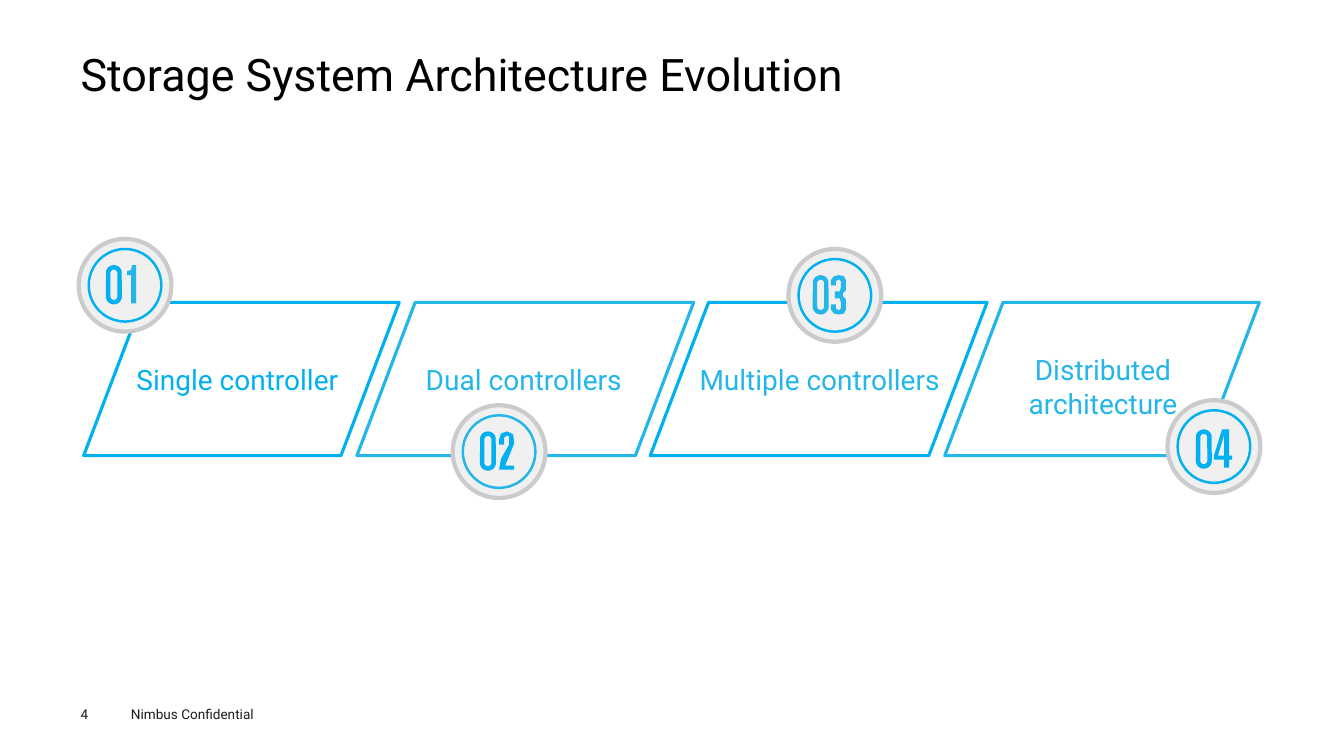
"""Build the storage architecture evolution slide: four panels with numbered badges."""
import math
import pptx
import pptx.dml.color
import pptx.enum.shapes
import pptx.enum.text
import pptx.util

PX = 9144
FINE = 10
SHAPE = pptx.enum.shapes.MSO_SHAPE
ALIGN = pptx.enum.text.PP_ALIGN
ANCHOR = pptx.enum.text.MSO_ANCHOR
RGB = pptx.dml.color.RGBColor.from_string

THEME = {
    "font": "Roboto",
    "bright": "00B0F0", "soft": "24B5E9",
    "badge": "F0F0F0", "rim": "CBCBCD",
    "title": "000000", "footer": "1D1D1B",
    "title_size": 32, "label_size": 20, "footer_size": 9.7,
    "panel_line": 2.25, "rim_line": 3, "ring_line": 1.75,
}

angles = [math.radians(step * 15) for step in range(24)]
capsules = [
    [(8 + r * math.cos(a), 19.5 + r * math.sin(a) + math.copysign(11.5, math.sin(a)))
     for a in angles]
    for r in (8, 3.5)
]
three_top = [(4, 16), (9, 16), (10, 12), (10, 6), (8, 4), (5, 6), (5, 10), (0, 10),
             (0, 5), (3, 1), (8, 0), (13, 1), (15, 5), (15, 15), (12, 18)]
three_bottom = [(x, 39 - y) for x, y in reversed(three_top)]
GLYPHS = {
    "0": capsules,
    "1": [[(0, 6), (4, 5), (5, 0), (9, 0), (9, 38), (4, 38), (4, 10), (0, 10)]],
    "2": [[(0, 8), (2, 2), (8, 0), (14, 3), (15, 12), (6, 34), (15, 34), (15, 38),
           (0, 38), (2, 27), (10, 13), (10, 5), (8, 4), (5, 6), (5, 13), (0, 13)]],
    "3": [three_top + three_bottom],
    "4": [[(8, 0), (15, 0), (15, 26), (18, 26), (18, 30), (15, 30), (15, 38),
           (10, 38), (10, 30), (0, 30), (0, 26)],
          [(10, 26), (4, 26), (10, 6)]],
}

prs = pptx.Presentation()
prs.slide_width, prs.slide_height = 1333 * PX, 750 * PX
s = prs.slides.add_slide(prs.slide_layouts[6])


def add_outline(kind, x, y, w, h, line, weight, fill=None):
    sp = s.shapes.add_shape(kind, x * PX, y * PX, w * PX, h * PX)
    sp.shadow.inherit = False
    if fill:
        sp.fill.solid()
        sp.fill.fore_color.rgb = RGB(THEME[fill])
    else:
        sp.fill.background()
    sp.line.color.rgb = RGB(THEME[line])
    sp.line.width = pptx.util.Pt(THEME[weight])
    return sp


def add_text(text, x, y, w, h, size, color, align=ALIGN.LEFT, inset=True):
    tf = s.shapes.add_textbox(x * PX, y * PX, w * PX, h * PX).text_frame
    tf.word_wrap = True
    if not inset:
        tf.margin_left = tf.margin_right = tf.margin_top = tf.margin_bottom = 0
    p = tf.paragraphs[0]
    p.text = text
    p.alignment = align
    p.font.name = THEME["font"]
    p.font.size = pptx.util.Pt(THEME[size])
    p.font.color.rgb = RGB(THEME[color])
    return tf


add_text("Nimbus Confidential", 120, 695, 160, 27, "footer_size", "footer")
add_text("4", 80, 700, 55, 16, "footer_size", "footer", inset=False)
title = add_text("Storage System Architecture Evolution", 80, 49, 1173, 54,
                 "title_size", "title", inset=False)
title.vertical_anchor = ANCHOR.MIDDLE
title.paragraphs[0].line_spacing = 0.9

for x, w, color in [(83, 313, "bright"), (354, 334, "soft"),
                    (645, 334, "bright"), (937, 312, "soft")]:
    panel = add_outline(SHAPE.PARALLELOGRAM, x, 300, w, 152, color, "panel_line")
    panel.adjustments[0] = 0.38

badges = [
    (78, 237, "bright", 26, [("0", 27, "bright"), ("1", 48, "soft")]),
    (449, 402, "soft", 26, [("0", 27, "bright"), ("2", 46, "bright")]),
    (782, 247, "bright", 26, [("0", 24, "soft"), ("3", 42, "soft")]),
    (1158, 397, "bright", 29, [("0", 28, "bright"), ("4", 46, "bright")]),
]
for x, y, ring, drop, digits in badges:
    add_outline(SHAPE.OVAL, x, y, 92, 92, "rim", "rim_line", "badge")
    add_outline(SHAPE.OVAL, x + 10, y + 10, 72, 72, ring, "ring_line")
    for digit, shift, color in digits:
        builder = s.shapes.build_freeform(scale=PX / FINE)
        for contour in GLYPHS[digit]:
            points = [(px * FINE, py * FINE) for px, py in contour]
            builder.move_to(*points[0])
            builder.add_line_segments(points[1:])
        glyph = builder.convert_to_shape((x + shift) * PX, (y + drop) * PX)
        glyph.shadow.inherit = False
        glyph.fill.solid()
        glyph.fill.fore_color.rgb = RGB(THEME[color])
        glyph.line.fill.background()

for text, x, y, w, color in [
    ("Single controller", 117, 355, 237, "bright"),
    ("Dual controllers", 401, 355, 237, "soft"),
    ("Multiple controllers", 671, 355, 284, "soft"),
    ("Distributed architecture", 1008, 345, 172, "soft"),
]:
    add_text(text, x, y, w, 57, "label_size", color, ALIGN.CENTER)

prs.save("out.pptx")
